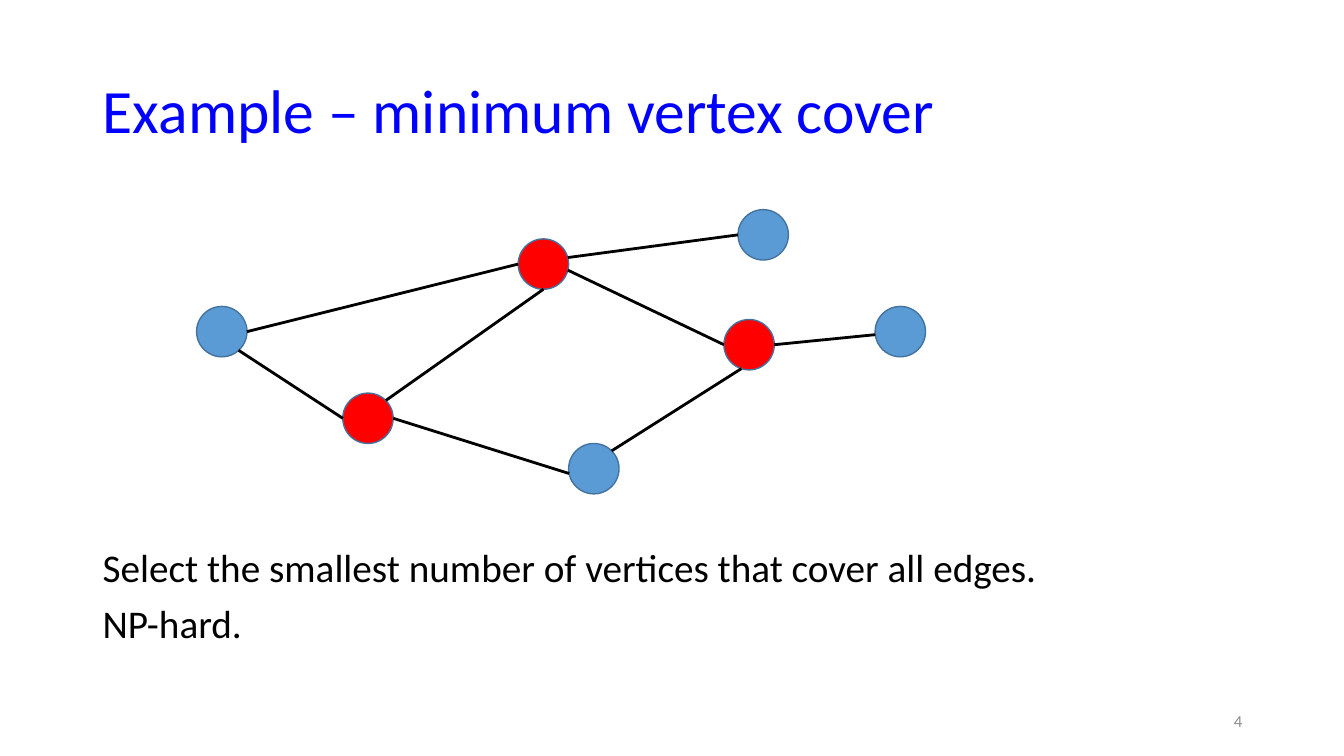
from math import cos, radians, sin

from lxml.etree import SubElement
from pptx import Presentation
from pptx.dml.color import RGBColor
from pptx.enum.shapes import MSO_CONNECTOR as Connector, MSO_SHAPE as Shape
from pptx.enum.text import MSO_ANCHOR as Anchor, PP_ALIGN as Align
from pptx.oxml.ns import qn
from pptx.util import Inches, Pt

TITLE = "Example – minimum vertex cover"
NOTES = ["Select the smallest number of vertices that cover all edges.", "NP-hard."]
PAGE_NUMBER = "4"
FONT = "Calibri"
BLUE, RED, OUTLINE = "5B9BD5", "FF0000", "43739E"
RADIUS = 0.25

VERTICES = {
    "west": (2.2, 3.29, BLUE),
    "east_cover": (7.43, 3.42, RED),
    "west_cover": (3.65, 4.15, RED),
    "south": (5.89, 4.65, BLUE),
    "north_cover": (5.39, 2.62, RED),
    "east": (8.93, 3.29, BLUE),
    "north": (7.57, 2.33, BLUE),
}
EDGES = [
    ("west", 0, "north_cover", 180),
    ("west", 48, "west_cover", 180),
    ("west_cover", -45, "north_cover", 90),
    ("west_cover", 0, "south", 169),
    ("north_cover", 14, "east_cover", 180),
    ("south", -45, "east_cover", 108),
    ("east_cover", 0, "east", 173),
    ("north_cover", -15, "north", 180),
]


def color(value):
    return RGBColor.from_string(value)


def place(shape, left, top, width, height):
    shape.left, shape.top = Inches(left), Inches(top)
    shape.width, shape.height = Inches(width), Inches(height)


def write(frame, lines, size, ink, anchor=Anchor.TOP, align=Align.LEFT, spacing=1.0):
    frame.word_wrap = True
    frame.vertical_anchor = anchor
    for index, line in enumerate(lines):
        para = frame.paragraphs[0] if index == 0 else frame.add_paragraph()
        para.text = line
        para.alignment = align
        para.line_spacing = spacing
        para.space_before = Pt(10 if index else 0)
        para.font.name, para.font.size = FONT, Pt(size)
        para.font.color.rgb = color(ink)


def rim_point(vertex, angle):
    x, y, _ = VERTICES[vertex]
    turn = radians(angle)
    return Inches(x + RADIUS * cos(turn)), Inches(y + RADIUS * sin(turn))


def add_vertex(page, x, y, fill):
    side = Inches(2 * RADIUS)
    circle = page.shapes.add_shape(
        Shape.OVAL, Inches(x - RADIUS), Inches(y - RADIUS), side, side)
    circle.shadow.inherit = False
    circle.fill.solid()
    circle.fill.fore_color.rgb = color(fill)
    circle.line.color.rgb = color(OUTLINE)
    circle.line.width = Pt(1)


def add_edge(page, start, start_angle, end, end_angle):
    edge = page.shapes.add_connector(
        Connector.STRAIGHT, *rim_point(start, start_angle), *rim_point(end, end_angle))
    edge.line.color.rgb = color("000000")
    edge.line.width = Pt(2)
    SubElement(edge._element.spPr, qn("a:effectLst"))


def main():
    deck = Presentation()
    deck.slide_width, deck.slide_height = Inches(13.33), Inches(7.5)
    page = deck.slides.add_slide(deck.slide_layouts[5])

    place(page.shapes.title, 0.92, 0.4, 11.5, 1.45)
    write(page.shapes.title.text_frame, [TITLE], 44, "0000FF", Anchor.MIDDLE, spacing=0.9)

    for vertex in VERTICES.values():
        add_vertex(page, *vertex)
    for edge in EDGES:
        add_edge(page, *edge)

    notes = page.shapes.add_textbox(Inches(0.92), Inches(5.39), Inches(11.5), Inches(1.37))
    write(notes.text_frame, NOTES, 28, "000000", spacing=0.9)
    number = page.shapes.add_textbox(Inches(9.42), Inches(6.95), Inches(3), Inches(0.4))
    write(number.text_frame, [PAGE_NUMBER], 12, "8C8C8C", Anchor.MIDDLE, Align.RIGHT)

    deck.save("out.pptx")


if __name__ == "__main__":
    main()
